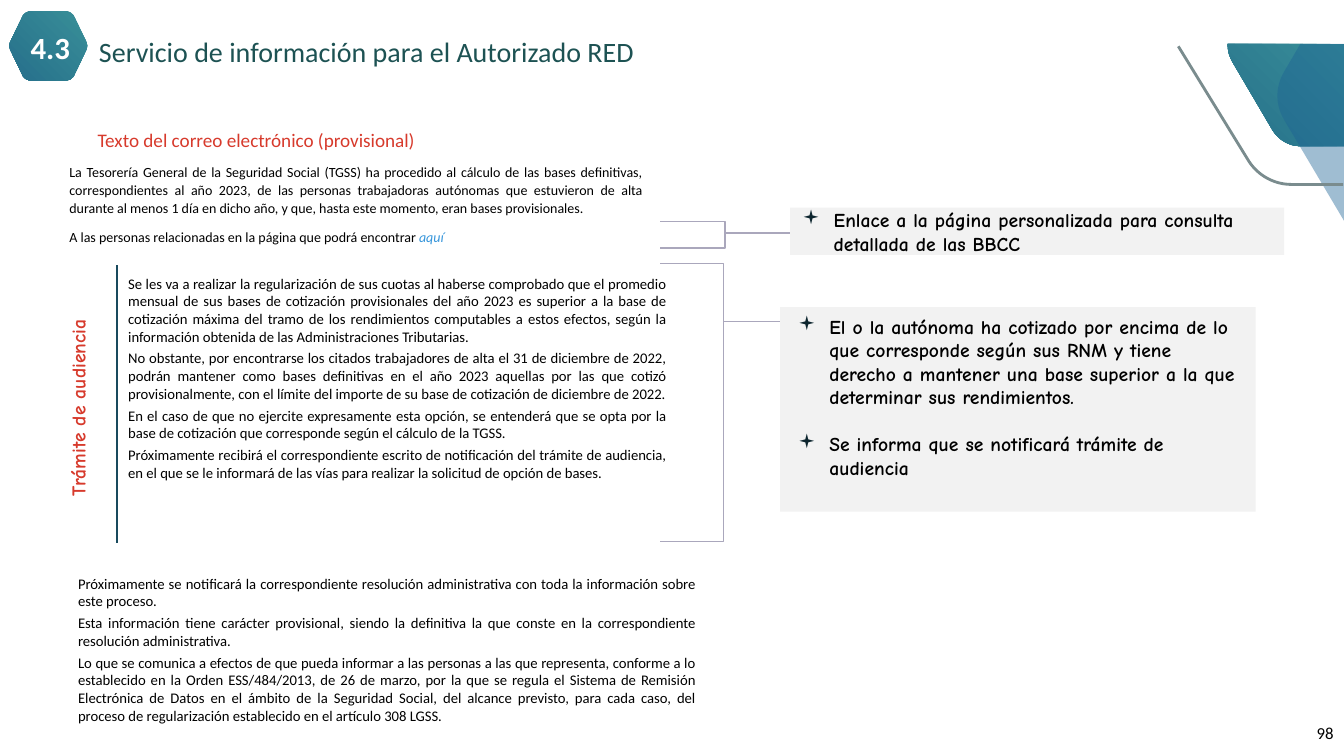
from dataclasses import dataclass
from typing import Optional

from lxml import etree
from pptx import Presentation
from pptx.dml.color import RGBColor
from pptx.enum.shapes import MSO_CONNECTOR, MSO_SHAPE
from pptx.enum.text import MSO_ANCHOR, PP_ALIGN
from pptx.oxml.ns import qn
from pptx.util import Pt

LEFT, CENTER, RIGHT, JUSTIFY = PP_ALIGN.LEFT, PP_ALIGN.CENTER, PP_ALIGN.RIGHT, PP_ALIGN.JUSTIFY
TOP, MIDDLE = MSO_ANCHOR.TOP, MSO_ANCHOR.MIDDLE
RECT, BRACE, STRAIGHT = MSO_SHAPE.RECTANGLE, MSO_SHAPE.LEFT_BRACE, MSO_CONNECTOR.STRAIGHT

COLORS = {
    "black": "000000", "white": "FFFFFF", "red": "D73A2C", "link": "3796DB",
    "title": "1D5253", "bullet": "0C252E", "panel": "F2F2F2", "brace": "AAA7BC",
    "rule": "194A5D", "teal_dark": "266F8B", "teal_light": "398F98",
    "blue": "1C6294", "grey": "7A8C8E",
}
BODY, HAND, SYMBOL = "Calibri", "Comic Neue", "Wingdings"


@dataclass
class Run:
    text: str
    color: str = "black"
    italic: bool = False


@dataclass
class TextBox:
    at: tuple[float, float, float, float]
    paras: list[list[Run]]
    size: float
    font: str = BODY
    bold: bool = False
    align: PP_ALIGN = LEFT
    anchor: MSO_ANCHOR = TOP
    line: Optional[float] = None
    before: float = 0
    after: float = 0
    bullets: bool = False
    rotation: float = 0
    inset: float = 3.6


@dataclass
class Outline:
    # Two numbers are a line end; six are a cubic curve
    steps: list[tuple[float, ...]]
    fill: Optional[str] = None
    alpha: Optional[int] = None
    line: Optional[str] = None


@dataclass
class Brace:
    at: tuple[float, float, float, float]
    tip: float


def rgb(name: str) -> RGBColor:
    return RGBColor.from_string(COLORS[name])


def add_bullet(p) -> None:
    pPr = p._p.get_or_add_pPr()
    pPr.set("marL", str(Pt(28.8)))
    pPr.set("indent", str(Pt(-22.32)))
    clr = etree.SubElement(pPr, qn("a:buClr"))
    etree.SubElement(clr, qn("a:srgbClr"), val=COLORS["bullet"])
    etree.SubElement(pPr, qn("a:buFont"), typeface=SYMBOL)
    etree.SubElement(pPr, qn("a:buChar"), char="▪")


def add_text(slide, box: TextBox) -> None:
    s = slide.shapes.add_textbox(*map(Pt, box.at))
    s.rotation = box.rotation
    tf = s.text_frame
    tf.word_wrap = True
    tf.vertical_anchor = box.anchor
    tf.margin_top = tf.margin_bottom = Pt(box.inset)
    for i, runs in enumerate(box.paras):
        p = tf.add_paragraph() if i else tf.paragraphs[0]
        if box.bullets:
            add_bullet(p)
        p.alignment = box.align
        if box.line:
            p.line_spacing = box.line
        if i and box.before:
            p.space_before = Pt(box.before)
        if box.after:
            p.space_after = Pt(box.after)
        for run in runs:
            r = p.add_run()
            r.text = run.text
            f = r.font
            f.name, f.size, f.bold, f.italic = box.font, Pt(box.size), box.bold, run.italic
            f.color.rgb = rgb(run.color)


def fill_teal(s) -> None:
    s.fill.gradient()
    for stop, color in zip(s.fill.gradient_stops, ("teal_dark", "teal_light")):
        stop.color.rgb = rgb(color)
    grad = s._element.spPr.find(qn("a:gradFill"))
    grad.remove(grad.find(qn("a:lin")))
    shade = etree.SubElement(grad, qn("a:path"), path="circle")
    etree.SubElement(shade, qn("a:fillToRect"), t="100000", r="100000")


def bend_segments(s, steps: list[tuple[float, ...]]) -> None:
    segments = list(s._element.spPr.iter(qn("a:lnTo")))
    for segment, step in zip(segments, steps[1:]):
        if len(step) == 2:
            continue
        segment.tag = qn("a:cubicBezTo")
        for n, i in enumerate((0, 2)):
            control = etree.Element(qn("a:pt"), x=str(Pt(step[i]) - s.left), y=str(Pt(step[i + 1]) - s.top))
            segment.insert(n, control)


def add_outline(slide, outline: Outline) -> None:
    points = [(Pt(step[-2]), Pt(step[-1])) for step in outline.steps]
    builder = slide.shapes.build_freeform(*points[0], scale=1.0)
    builder.add_line_segments(points[1:], close=outline.line is None)
    s = builder.convert_to_shape()
    bend_segments(s, outline.steps)
    s.shadow.inherit = False
    if outline.line:
        s.fill.background()
        s.line.color.rgb = rgb(outline.line)
        s.line.width = Pt(2)
        return
    s.line.fill.background()
    if outline.fill:
        s.fill.solid()
        s.fill.fore_color.rgb = rgb(outline.fill)
    else:
        fill_teal(s)
    if outline.alpha:
        clr = s._element.spPr.find(qn("a:solidFill")).find(qn("a:srgbClr"))
        etree.SubElement(clr, qn("a:alpha"), val=str(outline.alpha * 1000))


def add_brace(slide, brace: Brace) -> None:
    s = slide.shapes.add_shape(BRACE, *map(Pt, brace.at))
    s.shadow.inherit = False
    s.fill.background()
    s.line.color.rgb = rgb("brace")
    s.line.width = Pt(1)
    s.adjustments[0], s.adjustments[1] = 0, brace.tip
    s._element.spPr.find(qn("a:xfrm")).set("flipH", "1")


def add_panel(slide, at: tuple[float, float, float, float]) -> None:
    s = slide.shapes.add_shape(RECT, *map(Pt, at))
    s.shadow.inherit = False
    s.fill.solid()
    s.fill.fore_color.rgb = rgb("panel")
    s.line.fill.background()


def add_rule(slide, x: float, top: float, bottom: float) -> None:
    s = slide.shapes.add_connector(STRAIGHT, Pt(x), Pt(top), Pt(x), Pt(bottom))
    s.line.color.rgb = rgb("rule")
    s.line.width = Pt(1.5)
    etree.SubElement(s._element.spPr, qn("a:effectLst"))


BRACES = [Brace((471.6, 188.2, 90.5, 198.6), 0.208), Brace((471.6, 158.4, 92.5, 18.72), 0.438)]
PANELS = [(557.28, 219.4, 339.7, 146), (564.48, 148.32, 352.8, 33.84)]
OUTLINES = [
    # Corner ornament
    Outline([(928.8, 104.4), (960, 104.4), (960, 31.4), (876.96, 31.4), (876.96, 33.12),
             (876.96, 36.72, 878.4, 41.04, 880.56, 44.64), (909.36, 93.6),
             (913.68, 100.08, 920.88, 104.4, 928.8, 104.4)]),
    Outline([(960, 157.68), (960, 31.4), (928.8, 31.4), (917.28, 51.12),
             (910.8, 61.92, 910.8, 74.88, 917.28, 85.68)], fill="blue", alpha=42),
    Outline([(841.68, 33.12), (892.08, 115.2),
             (898.56, 125.28, 910.08, 131.76, 922.32, 131.76), (959.5, 131.76)], line="grey"),
    # Section badge
    Outline([(21.6, 7.92), (47.52, 7.92), (49.68, 7.92, 51.12, 9.36, 52.56, 10.8), (61.92, 30.24),
             (62.64, 31.68, 62.64, 33.84, 61.92, 35.28), (52.56, 54.72),
             (51.12, 56.16, 49.68, 57.6, 47.52, 57.6), (21.6, 57.6),
             (19.44, 57.6, 18, 56.16, 16.56, 54.72), (7.2, 35.28),
             (6.48, 33.84, 6.48, 31.68, 7.2, 30.24), (16.56, 10.8),
             (18, 9.36, 19.44, 7.92, 21.6, 7.92)]),
]
TEXTS = [
    # Headings and page number
    TextBox((12.5, 25.2, 46.8, 21.6), [[Run("4.3", "white")]], 22, bold=True, align=CENTER,
            anchor=MIDDLE, line=0.8, inset=0),
    TextBox((63.6, 21.2, 833.76, 31.68),
            [[Run("Servicio de información para el Autorizado RED", "title")]], 20),
    TextBox((62.64, 88.56, 670.32, 24.48),
            [[Run("Texto del correo electrónico (provisional)", "red")]], 13.7, anchor=MIDDLE, line=0.9),
    TextBox((743.76, 509.04, 216, 28.8), [[Run("98")]], 12, align=RIGHT, anchor=MIDDLE),
    TextBox((-25.2, 268.56, 162, 24.48), [[Run("Trámite de audiencia", "red")]], 14, HAND, True,
            rotation=270),
    # E-mail text
    TextBox((42.48, 112.32, 423.36, 66.96), [
        [Run("La Tesorería General de la Seguridad Social (TGSS) ha procedido al cálculo de las bases definitivas, correspondientes al año 2023, de las personas trabajadoras autónomas que estuvieron de alta durante al menos 1 día en dicho año, y que, hasta este momento, eran bases provisionales.")],
        [Run("A las personas relacionadas en la página que podrá encontrar "), Run("aquí", "link", True)],
    ], 10, align=JUSTIFY, line=1.07, after=8),
    TextBox((84.5, 192.6, 398.88, 181.44), [
        [Run("Se les va a realizar la regularización de sus cuotas al haberse comprobado que el promedio mensual de sus bases de cotización provisionales del año 2023 es superior a la base de cotización máxima del tramo de los rendimientos computables a estos efectos, según la información obtenida de las Administraciones Tributarias.")],
        [Run("No obstante, por encontrarse los citados trabajadores de alta el 31 de diciembre de 2022, podrán mantener como bases definitivas en el año 2023 aquellas por las que cotizó provisionalmente, con el límite del importe de su base de cotización de diciembre de 2022.")],
        [Run("En el caso de que no ejercite expresamente esta opción, se entenderá que se opta por la base de cotización que corresponde según el cálculo de la TGSS.")],
        [Run("Próximamente recibirá el correspondiente escrito de notificación del trámite de audiencia, en el que se le informará de las vías para realizar la solicitud de opción de bases.")],
    ], 10.5, align=JUSTIFY, before=3),
    TextBox((48.7, 406.9, 455.76, 115.2), [
        [Run("Próximamente se notificará la correspondiente resolución administrativa con toda la información sobre este proceso.")],
        [Run("Esta información tiene carácter provisional, siendo la definitiva la que conste en la correspondiente resolución administrativa.")],
        [Run("Lo que se comunica a efectos de que pueda informar a las personas a las que representa, conforme a lo establecido en la Orden ESS/484/2013, de 26 de marzo, por la que se regula el Sistema de Remisión Electrónica de Datos en el ámbito de la Seguridad Social, del alcance previsto, para cada caso, del proceso de regularización establecido en el artículo 308 LGSS.")],
    ], 10.5, align=JUSTIFY, before=3),
    # Side notes
    TextBox((556.56, 221.04, 335.52, 126), [
        [Run("El o la autónoma ha cotizado por encima de lo que corresponde según sus RNM y tiene derecho a mantener una base superior a la que determinar sus rendimientos.")],
        [Run("Se informa que se notificará trámite de audiencia")],
    ], 14, HAND, True, before=16.8, bullets=True),
    TextBox((559.6, 145.1, 360.72, 29.52),
            [[Run("Enlace a la página personalizada para consulta detallada de las BBCC")]],
            14, HAND, True, bullets=True),
]


def main() -> None:
    prs = Presentation()
    prs.slide_width, prs.slide_height = Pt(960), Pt(540)
    slide = prs.slides.add_slide(prs.slide_layouts[6])
    for brace in BRACES:
        add_brace(slide, brace)
    for outline in OUTLINES:
        add_outline(slide, outline)
    for panel in PANELS:
        add_panel(slide, panel)
    add_rule(slide, 83.52, 189.36, 388.08)
    for box in TEXTS:
        add_text(slide, box)
    prs.save("out.pptx")


if __name__ == "__main__":
    main()
